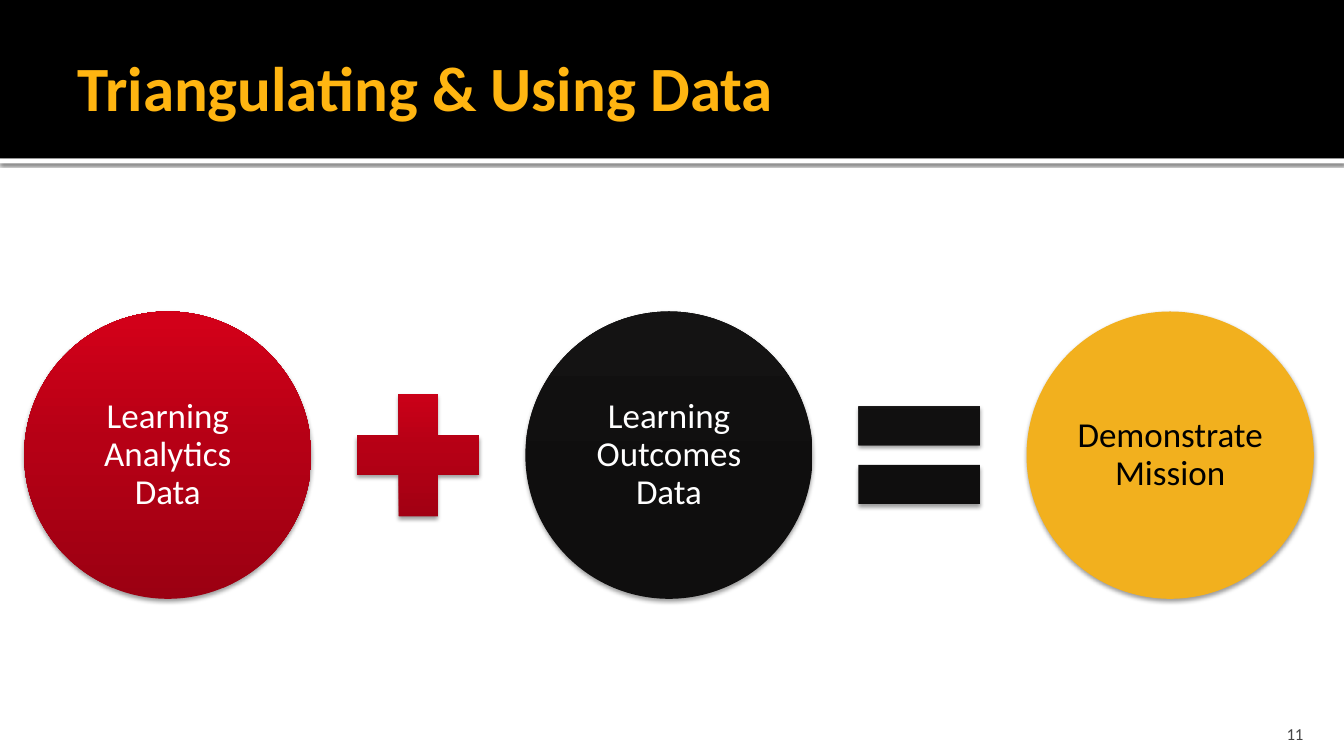
"""Build the slide 'Triangulating & Using Data' as a picture equation."""
from copy import deepcopy
from dataclasses import dataclass

from lxml.etree import SubElement
from pptx import Presentation
from pptx.dml.color import RGBColor
from pptx.enum.shapes import MSO_SHAPE
from pptx.enum.text import MSO_ANCHOR, PP_ALIGN
from pptx.oxml.ns import qn
from pptx.util import Cm, Pt


@dataclass(frozen=True)
class Theme:
    font: str = "Calibri"
    title_size: int = 45
    term_size: int = 25
    number_size: int = 12
    white: str = "FFFFFF"
    black: str = "000000"
    title: str = "FFB511"
    number: str = "454545"
    red: tuple = ("9B0012", "B60015", "D40019")
    dark: tuple = ("0F0E0E", "111010", "141313")
    gold: tuple = ("F2B01E",)


theme = Theme()


def add_block(kind, x, y, w, h, colors, shadow=None):
    sp = s.shapes.add_shape(kind, Cm(x), Cm(y), Cm(w), Cm(h))
    sp.shadow.inherit = False
    sp.line.fill.background()
    if len(colors) == 1:
        sp.fill.solid()
        sp.fill.fore_color.rgb = RGBColor.from_string(colors[0])
    else:
        sp.fill.gradient()
        sp.fill.gradient_angle = 90
        stops = sp._element.spPr.find(qn("a:gradFill")).find(qn("a:gsLst"))
        stops.insert(1, deepcopy(stops[0]))
        for stop, color, position in zip(sp.fill.gradient_stops, colors, (0, 0.55, 1)):
            stop.color.rgb = RGBColor.from_string(color)
            stop.position = position
    if shadow:
        opacity, blur, distance = shadow
        effects = sp._element.spPr.find(qn("a:effectLst"))
        outer = SubElement(effects, qn("a:outerShdw"), blurRad=str(Pt(blur)),
                           dist=str(Pt(distance)), dir="5400000", rotWithShape="0")
        color = SubElement(outer, qn("a:srgbClr"), val=theme.black)
        SubElement(color, qn("a:alpha"), val=str(opacity * 1000))
    return sp


def write(sp, text, size, color, align, anchor, insets, bold=False, spacing=1.0):
    tf = sp.text_frame
    left, top, right, bottom = map(Cm, insets)
    frame = {"word_wrap": True, "vertical_anchor": anchor, "margin_left": left,
             "margin_top": top, "margin_right": right, "margin_bottom": bottom}
    p = tf.paragraphs[0]
    r = p.add_run()
    r.text = text
    formats = (
        (tf, frame),
        (p, {"alignment": align, "line_spacing": spacing}),
        (r.font, {"name": theme.font, "size": Pt(size), "bold": bold}),
    )
    for target, values in formats:
        for name, value in values.items():
            setattr(target, name, value)
    r.font.color.rgb = RGBColor.from_string(color)


prs = Presentation()
prs.slide_width, prs.slide_height = Cm(33.87), Cm(19.05)
s = prs.slides.add_slide(prs.slide_layouts[6])

add_block(MSO_SHAPE.RECTANGLE, 0, 3.99, 33.87, 0.13, (theme.white,), (60, 2.5, 0.8))
add_block(MSO_SHAPE.RECTANGLE, 0, 0, 33.87, 3.99, (theme.black,))

title = s.shapes.add_textbox(Cm(1.7), Cm(0.43), Cm(30.48), Cm(3.48))
write(title, "Triangulating & Using Data", theme.title_size, theme.title,
      PP_ALIGN.LEFT, MSO_ANCHOR.MIDDLE, (0.25, 0.13, 0.13, 0.13), bold=True)

circle, sign, gap, middle = 7.24, 4.19, 0.6, 11.47
equation = (
    (MSO_SHAPE.OVAL, circle, theme.red, "Learning Analytics Data", theme.white),
    (MSO_SHAPE.MATH_PLUS, sign, theme.red, None, None),
    (MSO_SHAPE.OVAL, circle, theme.dark, "Learning Outcomes Data", theme.white),
    (MSO_SHAPE.MATH_EQUAL, sign, theme.dark, None, None),
    (MSO_SHAPE.OVAL, circle, theme.gold, "Demonstrate Mission", theme.black),
)
x = 0.61
for kind, size, colors, text, text_color in equation:
    sp = add_block(kind, x, middle - size / 2, size, size, colors, (38, 3.1, 2))
    if text:
        write(sp, text, theme.term_size, text_color, PP_ALIGN.CENTER,
              MSO_ANCHOR.MIDDLE, (0.08,) * 4, spacing=0.9)
    x += size + gap

number = s.shapes.add_textbox(Cm(30.38), Cm(17.98), Cm(2.72), Cm(0.76))
write(number, "11", theme.number_size, theme.number, PP_ALIGN.RIGHT,
      MSO_ANCHOR.BOTTOM, (0.25, 0.13, 0.25, 0))

prs.save("out.pptx")
